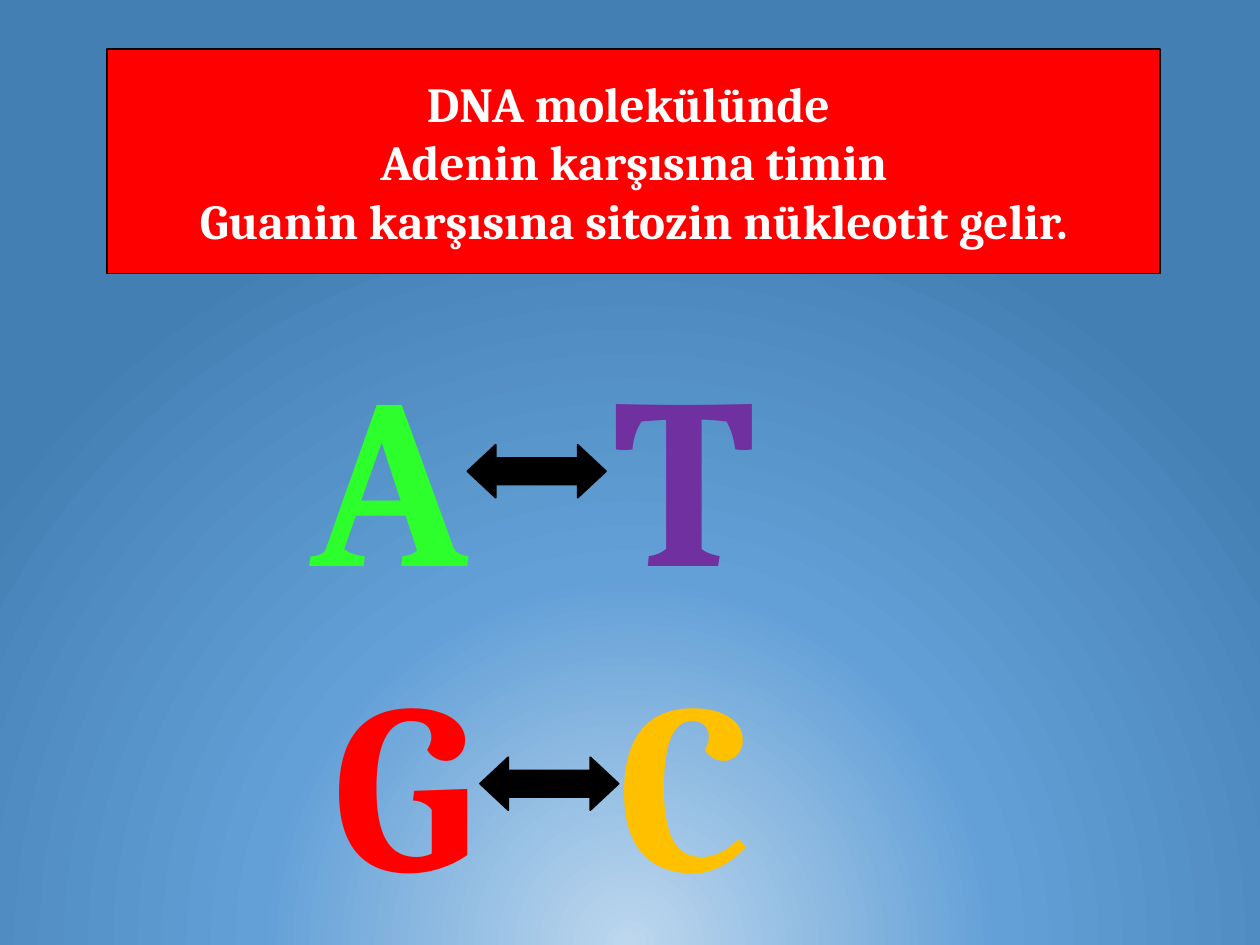
from lxml import etree
from pptx import Presentation
from pptx.dml.color import RGBColor
from pptx.enum.shapes import MSO_SHAPE
from pptx.enum.text import MSO_ANCHOR, MSO_AUTO_SIZE, PP_ALIGN
from pptx.oxml import parse_xml
from pptx.oxml.ns import nsdecls, qn
from pptx.util import Inches, Pt

RECTANGLE = MSO_SHAPE.RECTANGLE
DOUBLE_ARROW = MSO_SHAPE.LEFT_RIGHT_ARROW
CENTER = PP_ALIGN.CENTER
MIDDLE = MSO_ANCHOR.MIDDLE
FIT_SHAPE = MSO_AUTO_SIZE.SHAPE_TO_FIT_TEXT

RULE_LINES = [
    "DNA molekülünde ",
    "Adenin karşısına timin",
    "Guanin karşısına sitozin nükleotit gelir.",
]
BASES = [
    ("A", 2.36, 2.53, 1.46, "2DFF2D"),
    ("T", 4.7, 2.53, 1.46, "7030A0"),
    ("G", 2.48, 4.95, 1.46, "FF0000"),
    ("C", 4.78, 4.95, 1.31, "FFC000"),
]
PAIR_ARROWS = [(3.71, 3.53), (3.81, 6.01)]
GLOW_STOPS = [(0, "BDD7EE", 62), (47, "63A0D7", 100), (100, "447FB4", 100)]


def rgb(value):
    return RGBColor.from_string(value)


class SlideBuilder:
    """Draws styled elements on the current slide."""

    font_name = "Cambria"
    line_color = "000000"

    def __init__(self, slide):
        self.slide = slide

    def background(self, stops):
        fill = self.slide.background.fill
        fill.gradient()
        gradient = self.slide.element.find(".//" + qn("a:gradFill"))
        for child in list(gradient):
            gradient.remove(child)
        stop_list = etree.SubElement(gradient, qn("a:gsLst"))
        for position, color, opacity in stops:
            stop = etree.SubElement(stop_list, qn("a:gs"), pos=str(position * 1000))
            tone = etree.SubElement(stop, qn("a:srgbClr"), val=color)
            if opacity < 100:
                etree.SubElement(tone, qn("a:alpha"), val=str(opacity * 1000))
        circle = etree.SubElement(gradient, qn("a:path"), path="circle")
        etree.SubElement(circle, qn("a:fillToRect"),
                         l="50000", t="130000", r="50000", b="-30000")

    def shape(self, kind, left, top, width, height, fill):
        shape = self.slide.shapes.add_shape(
            kind, Inches(left), Inches(top), Inches(width), Inches(height))
        shape.shadow.inherit = False
        shape.fill.solid()
        shape.fill.fore_color.rgb = rgb(fill)
        shape.line.color.rgb = rgb(self.line_color)
        shape.line.width = Pt(1)
        return shape

    def style(self, paragraph, size, color):
        paragraph.alignment = CENTER
        paragraph.font.name = self.font_name
        paragraph.font.size = Pt(size)
        paragraph.font.bold = True
        paragraph.font.color.rgb = rgb(color)

    def banner(self, lines, left, top, width, height, fill):
        frame = self.shape(RECTANGLE, left, top, width, height, fill).text_frame
        frame.vertical_anchor = MIDDLE
        frame.text = "\n".join(lines)
        for paragraph in frame.paragraphs:
            self.style(paragraph, 28, "FFFFFF")

    def letter(self, text, left, top, width, height, color):
        frame = self.slide.shapes.add_textbox(
            Inches(left), Inches(top), Inches(width), Inches(height)).text_frame
        frame.word_wrap = False
        frame.auto_size = FIT_SHAPE
        paragraph = frame.paragraphs[0]
        run = paragraph.add_run()
        run.text = text
        self.style(paragraph, 138, color)
        outline = parse_xml(
            f'<a:ln {nsdecls("a")} w="{Pt(0.75)}"><a:solidFill>'
            f'<a:srgbClr val="{self.line_color}"/></a:solidFill></a:ln>')
        run._r.get_or_add_rPr().insert(0, outline)

    def pair_arrow(self, left, top):
        arrow = self.shape(DOUBLE_ARROW, left, top, 1.1, 0.42, "000000")
        arrow.adjustments[0] = 0.5
        arrow.adjustments[1] = 0.535


def main():
    deck = Presentation()
    deck.slide_width, deck.slide_height = Inches(10), Inches(7.5)
    builder = SlideBuilder(deck.slides.add_slide(deck.slide_layouts[6]))
    builder.background(GLOW_STOPS)
    builder.banner(RULE_LINES, 0.85, 0.39, 8.36, 1.78, "FF0000")
    for base, left, top, width, color in BASES:
        builder.letter(base, left, top, width, 2.42, color)
    for left, top in PAIR_ARROWS:
        builder.pair_arrow(left, top)
    deck.save("out.pptx")


if __name__ == "__main__":
    main()
